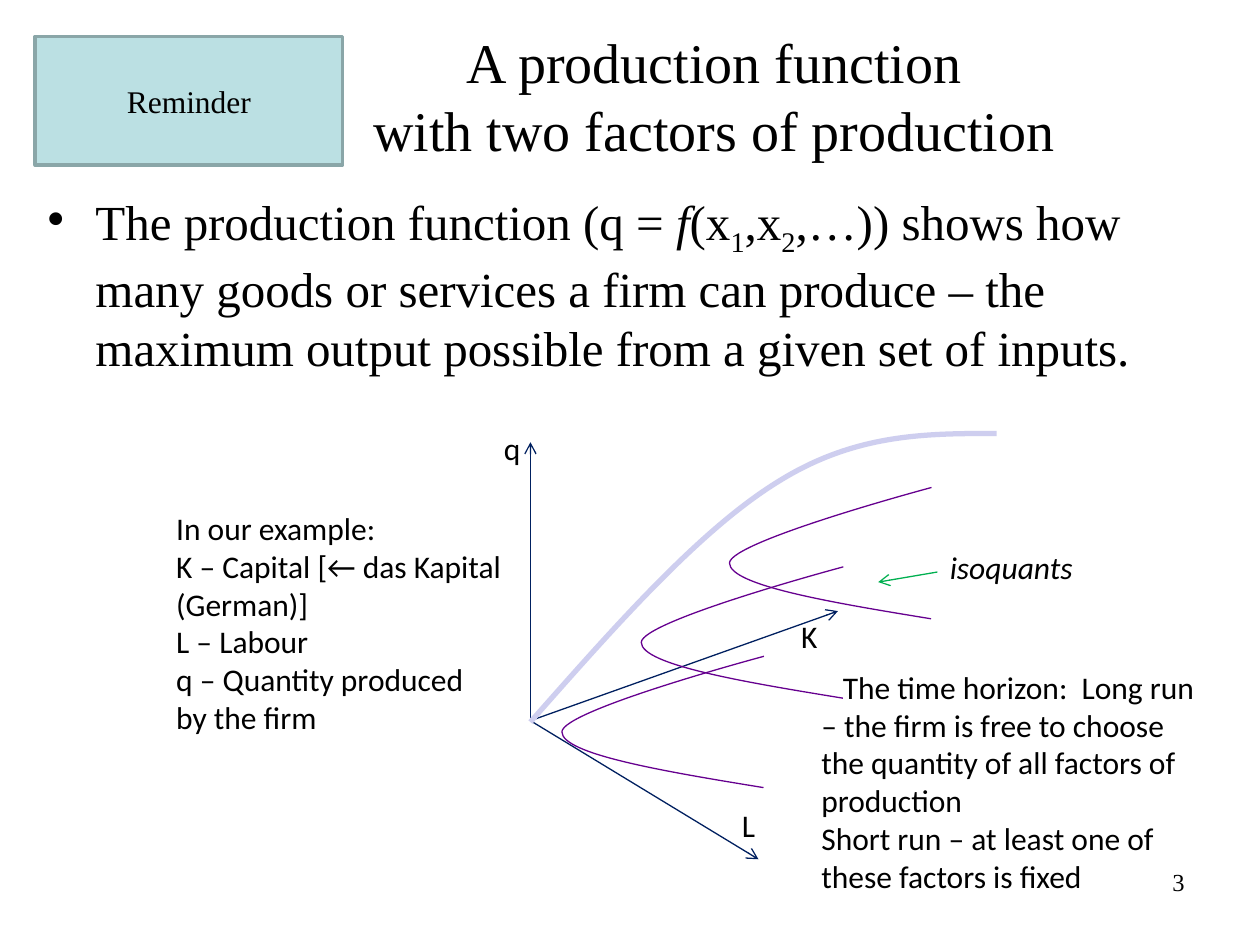
from dataclasses import dataclass
from typing import Optional

from lxml.etree import SubElement
from pptx import Presentation
from pptx.dml.color import RGBColor
from pptx.enum.shapes import MSO_CONNECTOR, MSO_SHAPE
from pptx.enum.text import MSO_ANCHOR, MSO_AUTO_SIZE, PP_ALIGN
from pptx.oxml.ns import qn
from pptx.util import Emu, Inches, Pt

COLUMNS, ROWS = 100, 75
CELL = Inches(10) // COLUMNS
SERIF, SANS = "Times New Roman", "Calibri"
COLORS = {
    "text": "000000",
    "axis": "002060",
    "surface": "CECEEF",
    "isoquant": "66008F",
    "pointer": "00B050",
    "badge": "BBE0E3",
    "badge_edge": "8AA6A8",
}

Point = tuple[float, float]


@dataclass
class Span:
    text: str
    italic: bool = False
    baseline: int = 0


@dataclass
class Label:
    """A text box; places and sizes are in grid cells."""
    text: str
    left: float
    top: float
    width: float
    height: float = 4
    font: str = SANS
    size: float = 18
    italic: bool = False
    align: Optional[PP_ALIGN] = None
    anchor: MSO_ANCHOR = MSO_ANCHOR.TOP
    grow: bool = True


@dataclass
class Arrow:
    start: Point
    end: Point
    color: str


@dataclass
class Curve:
    """A chain of cubic curves: a start, then three control points each."""
    points: list[Point]
    color: str
    weight: float


ORIGIN = (42.1, 57.2)
ARROWS = [
    Arrow(ORIGIN, (42.1, 35.1), "axis"),
    Arrow(ORIGIN, (60.2, 68.2), "axis"),
    Arrow(ORIGIN, (66.5, 48.5), "axis"),
    Arrow((74.4, 45.4), (69.7, 46.2), "pointer"),
]
SURFACE = Curve(
    [(42.1, 57.3), (48.9, 49.6), (55.6, 42), (61.8, 38.2),
     (67.9, 34.4), (73.5, 34.4), (79.1, 34.4)],
    "surface", 3)
ISOQUANT = [(0, 8.3), (7.1, 12.1), (14.3, 15.9), (15.4, 14.5),
            (16.4, 13.1), (6.3, 0), (6.3, 0)]
ISOQUANT_CORNERS = [(52.4, 42.2), (46.1, 49.3), (59.4, 35.9)]
ISOQUANT_TURN = 37.4

TITLE = Label("A production function\vwith two factors of production",
              15.7, 1.3, 82, 12.5, SERIF, 32, align=PP_ALIGN.CENTER,
              anchor=MSO_ANCHOR.MIDDLE, grow=False)
BODY = Label("", 2.8, 14.7, 95, 22.4, SERIF, 28, grow=False)
BODY_SPANS = [
    Span("The production function (q = "),
    Span("f", italic=True),
    Span("(x"),
    Span("1", baseline=-25),
    Span(",x"),
    Span("2", baseline=-25),
    Span(",…)) shows how many goods or services a firm can produce – the "
         "maximum output possible from a given set of inputs."),
]
HORIZON = Label(
    "The time horizon:  Long run – the firm is free to choose the quantity "
    "of all factors of production\n"
    "Short run – at least one of these factors is fixed",
    64.2, 52.5, 33.1, 19.2)
LABELS = [
    TITLE,
    Label("q", 39, 33.6, 3.1),
    Label("K", 62.6, 48.5, 3.1),
    Label("L", 57.9, 63.5, 3.1),
    Label("isoquants", 74.4, 43, 17.3, italic=True),
    Label("In our example:\nK – Capital [← das Kapital (German)]\nL – Labour\n"
          "q – Quantity produced\nby the firm", 13, 39.9, 34.7, 19.2),
    Label("3", 71.7, 68.3, 23.3, 5.2, SERIF, 14, align=PP_ALIGN.RIGHT,
          grow=False),
]


def cells(count: float) -> Emu:
    return Emu(round(count * CELL))


def rgb(name: str) -> RGBColor:
    return RGBColor.from_string(COLORS[name])


def style_font(font, name: str, size: float, italic: bool) -> None:
    font.name, font.size, font.italic = name, Pt(size), italic
    font.color.rgb = rgb("text")


def style_line(line, color: str, weight: float) -> None:
    line.color.rgb = rgb(color)
    line.width = Pt(weight)


def add_label(page, label: Label):
    box = page.shapes.add_textbox(cells(label.left), cells(label.top),
                                  cells(label.width), cells(label.height))
    frame = box.text_frame
    frame.text = label.text
    frame.word_wrap = True
    frame.vertical_anchor = label.anchor
    if label.grow:
        frame.auto_size = MSO_AUTO_SIZE.SHAPE_TO_FIT_TEXT
    for para in frame.paragraphs:
        para.alignment = label.align
        for span in para.runs:
            style_font(span.font, label.font, label.size, label.italic)
    return box


def add_body(page) -> None:
    para = add_label(page, BODY).text_frame.paragraphs[0]
    properties = para._p.get_or_add_pPr()
    properties.set("marL", str(cells(3.8)))
    properties.set("indent", str(-cells(3.8)))
    spacing = SubElement(properties, qn("a:spcBef"))
    SubElement(spacing, qn("a:spcPct")).set("val", "20000")
    SubElement(properties, qn("a:buChar")).set("char", "•")
    for item in BODY_SPANS:
        span = para.add_run()
        span.text = item.text
        style_font(span.font, BODY.font, BODY.size, item.italic)
        if item.baseline:
            span._r.get_or_add_rPr().set("baseline", str(item.baseline * 1000))


def add_arrow(page, arrow: Arrow) -> None:
    ends = [cells(value) for value in arrow.start + arrow.end]
    connector = page.shapes.add_connector(MSO_CONNECTOR.STRAIGHT, *ends)
    style_line(connector.line, arrow.color, 0.75)
    SubElement(connector.line._get_or_add_ln(), qn("a:tailEnd")).set("type", "arrow")
    SubElement(connector._element.spPr, qn("a:effectLst"))


def add_curve(page, curve: Curve):
    start, *controls = [(cells(x), cells(y)) for x, y in curve.points]
    builder = page.shapes.build_freeform(*start)
    builder.add_line_segments(controls, close=False)
    shape = builder.convert_to_shape()
    outline = next(shape._element.iter(qn("a:path")))
    corners = outline.findall(qn("a:lnTo"))
    for first in range(0, len(corners), 3):
        bend = SubElement(outline, qn("a:cubicBezTo"))
        for corner in corners[first:first + 3]:
            bend.append(corner[0])
            outline.remove(corner)
    shape.fill.background()
    shape.shadow.inherit = False
    style_line(shape.line, curve.color, curve.weight)
    return shape


def add_isoquant(page, corner: Point) -> None:
    points = [(corner[0] + x, corner[1] + y) for x, y in ISOQUANT]
    shape = add_curve(page, Curve(points, "isoquant", 0.75))
    shape.rotation = ISOQUANT_TURN
    shape._element.spPr.find(qn("a:xfrm")).set("flipH", "1")


def add_badge(page) -> None:
    badge = page.shapes.add_shape(MSO_SHAPE.RECTANGLE, cells(2.8), cells(2.9),
                                  cells(24.4), cells(10.2))
    badge.shadow.inherit = False
    badge.fill.solid()
    badge.fill.fore_color.rgb = rgb("badge")
    style_line(badge.line, "badge_edge", 2)
    badge.text_frame.text = "Reminder"
    badge.text_frame.vertical_anchor = MSO_ANCHOR.MIDDLE
    para = badge.text_frame.paragraphs[0]
    para.alignment = PP_ALIGN.CENTER
    style_font(para.runs[0].font, SERIF, 18, False)


def main() -> None:
    deck = Presentation()
    deck.slide_width, deck.slide_height = cells(COLUMNS), cells(ROWS)
    page = deck.slides.add_slide(deck.slide_layouts[6])
    add_body(page)
    for arrow in ARROWS:
        add_arrow(page, arrow)
    add_curve(page, SURFACE)
    for corner in ISOQUANT_CORNERS:
        add_isoquant(page, corner)
    for label in LABELS:
        add_label(page, label)
    horizon = add_label(page, HORIZON).text_frame.paragraphs[0]
    horizon._p.get_or_add_pPr().set("indent", str(cells(1.7)))
    add_badge(page)
    deck.save("out.pptx")


if __name__ == "__main__":
    main()
